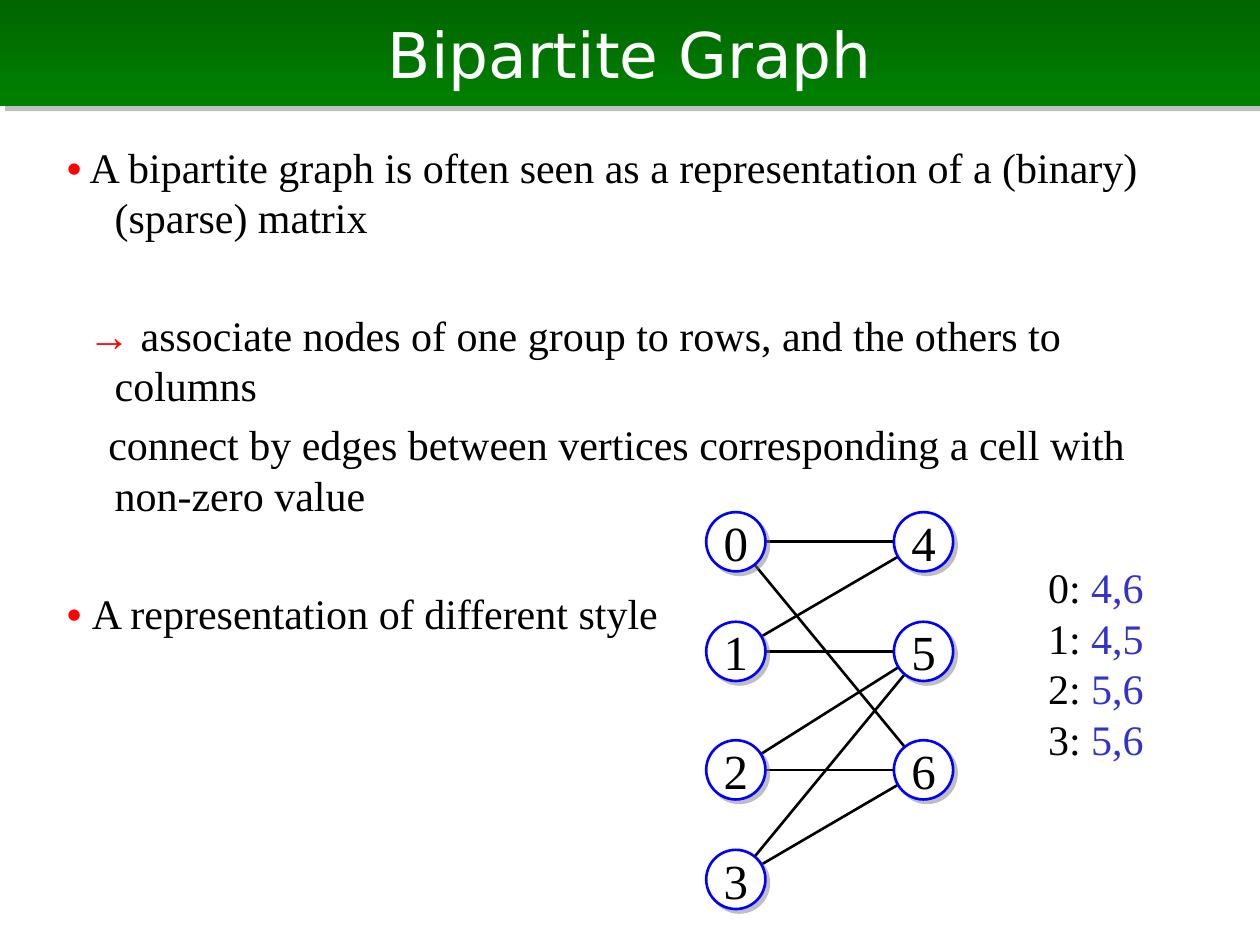
from lxml import etree
from pptx import Presentation
from pptx.dml.color import RGBColor
from pptx.enum.shapes import MSO_CONNECTOR, MSO_SHAPE
from pptx.enum.text import MSO_ANCHOR, MSO_AUTO_SIZE, PP_ALIGN
from pptx.oxml.ns import qn
from pptx.util import Inches, Pt

STRAIGHT = MSO_CONNECTOR.STRAIGHT
OVAL = MSO_SHAPE.OVAL
MIDDLE, TOP = MSO_ANCHOR.MIDDLE, MSO_ANCHOR.TOP
CENTER, LEFT = PP_ALIGN.CENTER, PP_ALIGN.LEFT
NO_FIT = MSO_AUTO_SIZE.NONE

COLORS = {
    "banner_top": "006600", "banner_bottom": "008000", "shadow": "808080",
    "white": "FFFFFF", "text": "000000", "marker": "FF0000",
    "node": "0000FF", "neighbours": "3333CC",
}
TITLE_FONT, BODY_FONT = "DejaVu Sans", "Times New Roman"

TITLE = "Bipartite Graph"
# marker, statement, first-line indent (inches), space before (points)
STATEMENTS = [
    ("•", " A bipartite graph is often seen as a representation of a (binary) "
          "(sparse) matrix", -0.38, 5),
    ("→ ", "associate nodes of one group to rows, and the others to columns",
     -0.21, 38.5),
    ("", "connect by edges between vertices corresponding a cell with "
         "non-zero value", -0.05, 5),
    ("• ", "A representation of different style", -0.38, 38.5),
]
ADJACENCY = {0: [4, 6], 1: [4, 5], 2: [5, 6], 3: [5, 6]}

HANGING = 0.38
NODE_SIZE = 0.47
ROW_CENTERS = [4.3, 5.17, 6.11, 6.98]
GROUPS = [(5.84, [0, 1, 2, 3]), (7.33, [4, 5, 6])]
NODE_CENTERS = {node: (x, y) for x, nodes in GROUPS
                for node, y in zip(nodes, ROW_CENTERS)}


def color(name):
    return RGBColor.from_string(COLORS[name])


def place(shape, left, top, width, height):
    shape.left, shape.top = Inches(left), Inches(top)
    shape.width, shape.height = Inches(width), Inches(height)


def style(run, size, color_name, font=BODY_FONT, bold=False):
    run.font.size, run.font.name, run.font.bold = Pt(size), font, bold
    run.font.color.rgb = color(color_name)


def add_runs(paragraph, size, parts):
    """Add one run for each (text, color name, bold) that has text."""
    for text, color_name, bold in parts:
        if text:
            run = paragraph.add_run()
            run.text = text
            style(run, size, color_name, bold=bold)


def cast_shadow(shape, distance):
    """Drop a sharp half-transparent shadow to the lower right."""
    shape.shadow.inherit = False
    effects = shape.element.spPr.find(qn("a:effectLst"))
    shadow = etree.SubElement(effects, qn("a:outerShdw"), blurRad="0",
                              dist=str(Pt(distance)), dir="2700000",
                              algn="ctr", rotWithShape="0")
    tint = etree.SubElement(shadow, qn("a:srgbClr"), val=COLORS["shadow"])
    etree.SubElement(tint, qn("a:alpha"), val="50000")


def fill_title(banner):
    place(banner, 0, 0, 10, 0.84)
    banner.fill.gradient()
    banner.fill.gradient_angle = 270
    stops = zip(banner.fill.gradient_stops, ("banner_top", "banner_bottom"))
    for position, (stop, name) in enumerate(stops):
        stop.position = position
        stop.color.rgb = color(name)
    cast_shadow(banner, 4.2)
    frame = banner.text_frame
    frame.text = TITLE
    frame.vertical_anchor, frame.auto_size = MIDDLE, NO_FIT
    frame.paragraphs[0].alignment = CENTER
    style(frame.paragraphs[0].runs[0], 36, "white", TITLE_FONT)


def fill_body(body):
    place(body, 0.43, 1.07, 9.29, 5.98)
    frame = body.text_frame
    frame.vertical_anchor, frame.auto_size = TOP, NO_FIT
    for i, (marker, statement, indent, before) in enumerate(STATEMENTS):
        paragraph = frame.add_paragraph() if i else frame.paragraphs[0]
        paragraph.alignment = LEFT
        paragraph.space_before = Pt(before)
        properties = paragraph._p.get_or_add_pPr()
        properties.set("marL", str(Inches(HANGING)))
        properties.set("indent", str(Inches(indent)))
        etree.SubElement(properties, qn("a:buNone"))
        add_runs(paragraph, 24, [(marker, "marker", True),
                                 (statement, "text", False)])


def add_adjacency_list(shapes):
    listing = shapes.add_textbox(Inches(8.22), Inches(4.41),
                                 Inches(0.96), Inches(1.7))
    frame = listing.text_frame
    frame.word_wrap = False
    for i, (node, neighbours) in enumerate(ADJACENCY.items()):
        paragraph = frame.add_paragraph() if i else frame.paragraphs[0]
        linked = ",".join(map(str, neighbours))
        add_runs(paragraph, 24, [(f"{node}:", "text", False),
                                 (f" {linked}", "neighbours", False)])


def add_edge(shapes, start, end):
    ends = [Inches(v) for v in NODE_CENTERS[start] + NODE_CENTERS[end]]
    edge = shapes.add_connector(STRAIGHT, *ends)
    edge.line.color.rgb = color("text")
    edge.line.width = Pt(1.5)
    etree.SubElement(edge.element.spPr, qn("a:effectLst"))


def add_node(shapes, label, x, y):
    node = shapes.add_shape(OVAL, Inches(x - NODE_SIZE / 2),
                            Inches(y - NODE_SIZE / 2),
                            Inches(NODE_SIZE), Inches(NODE_SIZE))
    node.fill.solid()
    node.fill.fore_color.rgb = color("white")
    node.line.color.rgb = color("node")
    node.line.width = Pt(1.5)
    cast_shadow(node, 2.8)
    frame = node.text_frame
    frame.text = str(label)
    frame.word_wrap, frame.vertical_anchor = False, MIDDLE
    frame.paragraphs[0].alignment = CENTER
    style(frame.paragraphs[0].runs[0], 28, "text")


def main():
    deck = Presentation()
    deck.slide_width, deck.slide_height = Inches(10), Inches(7.5)
    slide = deck.slides.add_slide(deck.slide_layouts[1])
    fill_title(slide.shapes.title)
    fill_body(slide.placeholders[1])
    add_adjacency_list(slide.shapes)
    for node, neighbours in ADJACENCY.items():
        for neighbour in neighbours:
            add_edge(slide.shapes, node, neighbour)
    for label, (x, y) in NODE_CENTERS.items():
        add_node(slide.shapes, label, x, y)
    deck.save("out.pptx")


if __name__ == "__main__":
    main()
